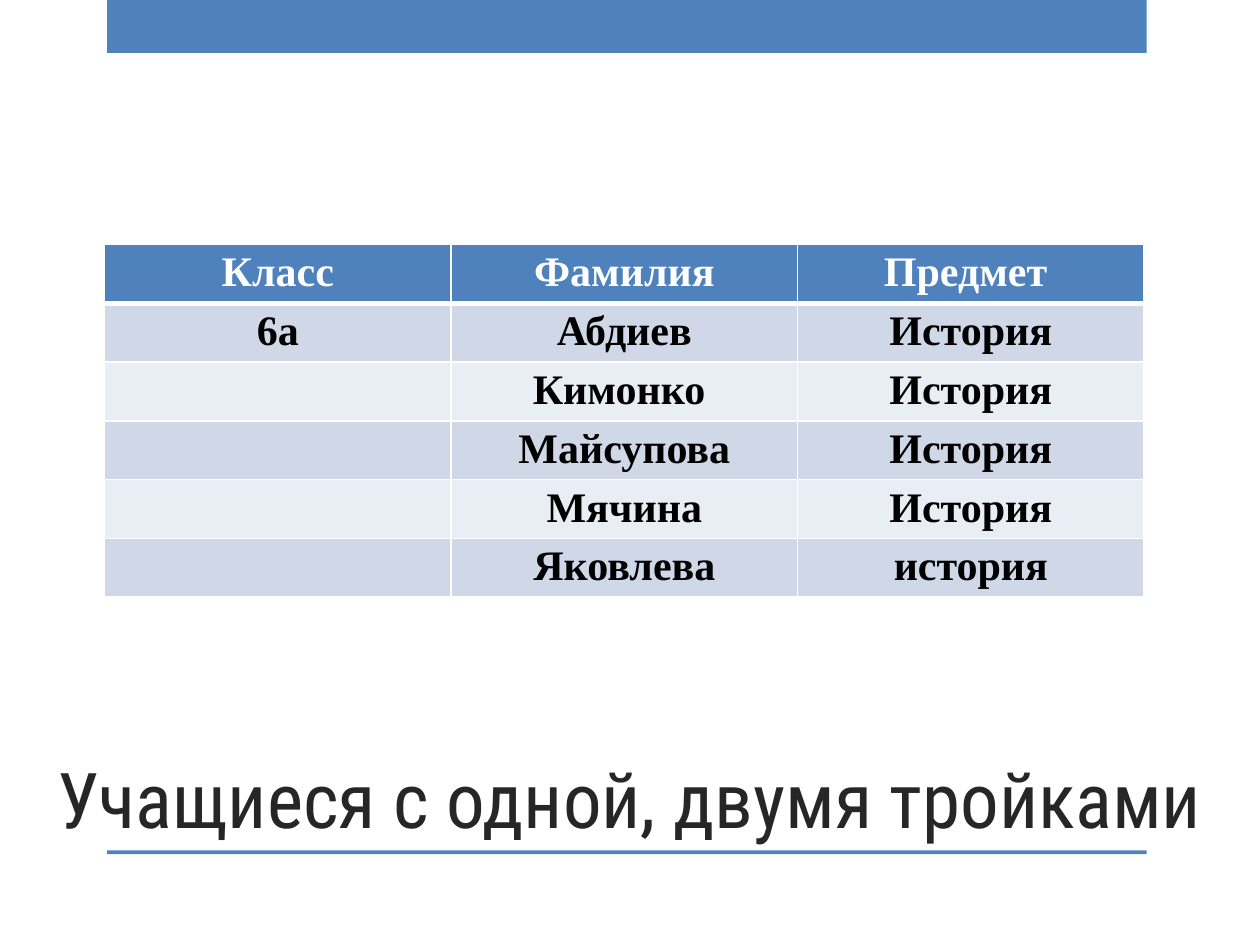
from lxml import etree
from pptx import Presentation
from pptx.dml.color import RGBColor
from pptx.enum import shapes, text
from pptx.oxml import ns
from pptx.util import Inches, Pt

BLUE = RGBColor(0x4F, 0x81, 0xBD)
BAND_DARK = RGBColor(0xD0, 0xD8, 0xE8)
BAND_LIGHT = RGBColor(0xE9, 0xED, 0xF4)
WHITE = RGBColor(0xFF, 0xFF, 0xFF)
BLACK = RGBColor(0, 0, 0)
TITLE_GRAY = RGBColor(0x26, 0x26, 0x26)

HEADINGS = ("Класс", "Фамилия", "Предмет ")
STUDENTS = (
    ("6а", "Абдиев", "История"),
    ("", "Кимонко ", "История"),
    ("", "Майсупова", "История"),
    ("", "Мячина", "История"),
    ("", "Яковлева", "история"),
)


def style_text(paragraph, font_name, size, color, bold=False):
    paragraph.alignment = text.PP_ALIGN.CENTER
    font = paragraph.font
    font.name, font.size, font.bold = font_name, Pt(size), bold
    font.color.rgb = color


def add_bar(slide, left, top, width, height):
    bar = slide.shapes.add_shape(
        shapes.MSO_SHAPE.RECTANGLE, left, top, width, height)
    bar.shadow.inherit = False
    bar.fill.solid()
    bar.fill.fore_color.rgb = BLUE
    bar.line.fill.background()


def place_title(slide, wording, left, top, width, height):
    title = slide.shapes.title
    title.left, title.top, title.width, title.height = left, top, width, height
    frame = title.text_frame
    frame.text = wording
    frame.word_wrap = True
    frame.auto_size = text.MSO_AUTO_SIZE.NONE
    frame.vertical_anchor = text.MSO_ANCHOR.BOTTOM
    style_text(frame.paragraphs[0], "Roboto Condensed", 44, TITLE_GRAY)


def set_borders(cell, **widths):
    """Draw white borders; widths are points keyed by side: L, R, T, B."""
    properties = cell._tc.get_or_add_tcPr()
    for side, width in widths.items():
        line = etree.SubElement(
            properties, ns.qn(f"a:ln{side}"), w=str(Pt(width)))
        fill = etree.SubElement(line, ns.qn("a:solidFill"))
        etree.SubElement(fill, ns.qn("a:srgbClr"), val=str(WHITE))


def add_student_table(slide, left, top, width, height):
    rows = (HEADINGS,) + STUDENTS
    table = slide.shapes.add_table(
        len(rows), len(HEADINGS), left, top, width, height).table
    for r, row in enumerate(rows):
        band = BLUE if r == 0 else BAND_DARK if r % 2 else BAND_LIGHT
        for c, wording in enumerate(row):
            cell = table.cell(r, c)
            cell.margin_top = cell.margin_bottom = Inches(0.04)
            set_borders(cell, L=1, R=1, T=3 if r == 1 else 1,
                        B=3 if r == 0 else 1)
            cell.fill.solid()
            cell.fill.fore_color.rgb = band
            cell.text = wording
            style_text(cell.text_frame.paragraphs[0], "Times New Roman", 24,
                       BLACK if r else WHITE, bold=True)


def build_slide(presentation):
    slide = presentation.slides.add_slide(presentation.slide_layouts[5])
    left, width = Inches(0.85), Inches(8.25)
    add_bar(slide, left, 0, width, Inches(0.42))
    add_bar(slide, left, Inches(6.75), width, Inches(0.03))
    place_title(slide, "Учащиеся с одной, двумя тройками",
                0, Inches(5), presentation.slide_width, Inches(1.75))
    add_student_table(slide, Inches(0.83), Inches(1.94), width, Inches(2.8))


def main():
    presentation = Presentation()
    presentation.slide_width = Inches(10)
    presentation.slide_height = Inches(7.5)
    build_slide(presentation)
    presentation.save("out.pptx")


if __name__ == "__main__":
    main()
